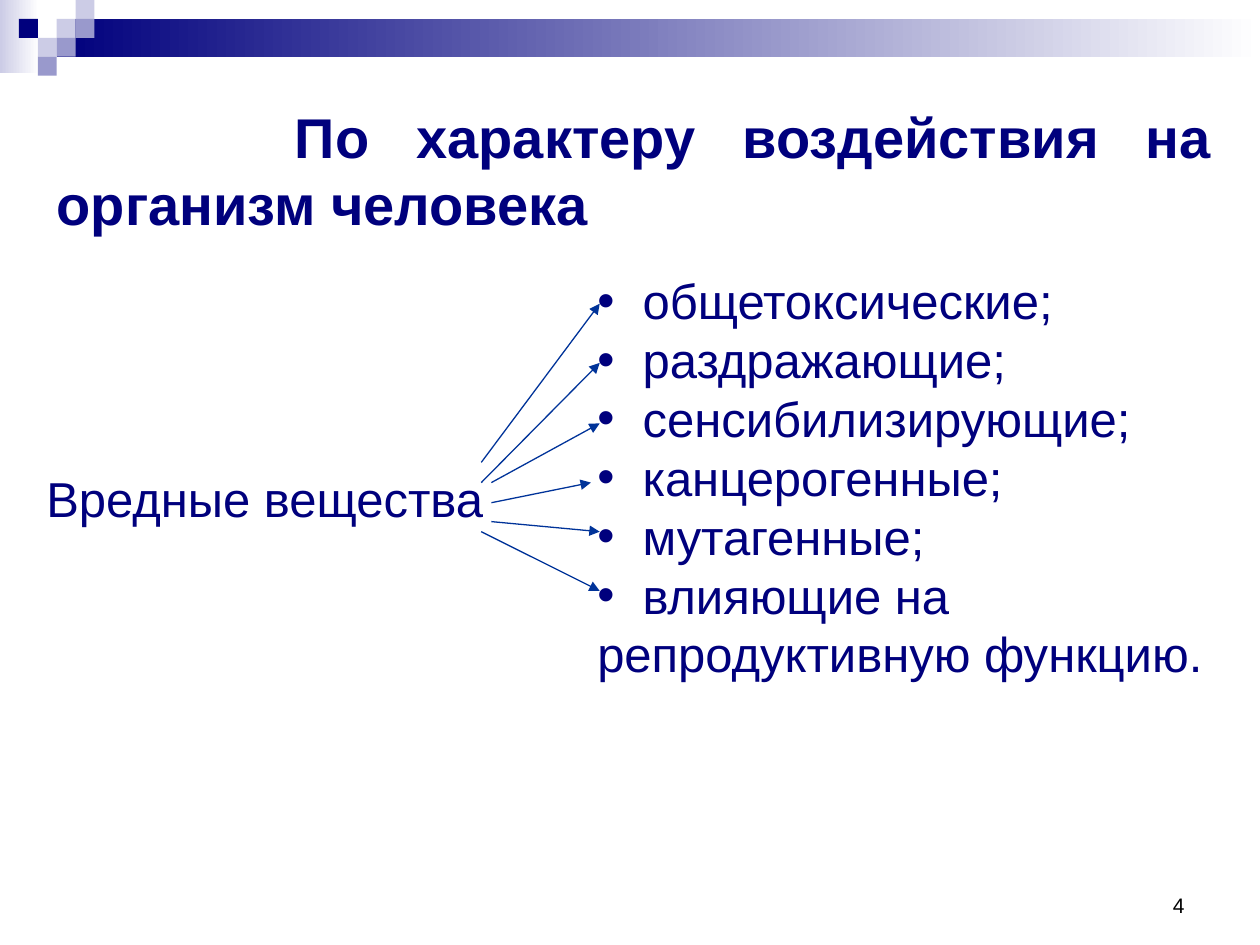
from dataclasses import dataclass

from lxml.etree import SubElement
from pptx import Presentation
from pptx.dml.color import RGBColor
from pptx.enum.shapes import MSO_CONNECTOR, MSO_SHAPE
from pptx.enum.text import MSO_ANCHOR, MSO_AUTO_SIZE, PP_ALIGN
from pptx.oxml.ns import qn
from pptx.util import Inches, Pt

TITLE = "По характеру воздействия на организм человека"
SOURCE = "Вредные вещества"
EFFECTS = [
    "общетоксические;",
    "раздражающие;",
    "сенсибилизирующие;",
    "канцерогенные;",
    "мутагенные;",
    "влияющие на",
]
LAST_EFFECT_ENDING = "репродуктивную функцию."
PAGE_NUMBER = "4"


@dataclass(frozen=True)
class Theme:
    font: str = "Arial"
    navy: str = "00007D"
    violet: str = "9999CC"
    pale: str = "CCCCE6"
    white: str = "FFFFFF"
    black: str = "000000"
    arrow: str = "003399"
    title_size: int = 32
    text_size: int = 28
    number_size: int = 12
    arrow_width: float = 0.75


THEME = Theme()

# left, top, width, height, start colour of the fade to white
BANDS = [(0, 0, 0.31, 0.58, THEME.pale), (0.45, 0.15, 9.55, 0.3, THEME.navy)]
TILE = 0.15
# column, row, colour on the grid of tiles
TILES = [
    (3, 1, THEME.pale),
    (4, 0, THEME.pale),
    (4, 1, THEME.violet),
    (2, 2, THEME.pale),
    (1, 1, THEME.navy),
    (3, 2, THEME.violet),
    (2, 3, THEME.violet),
]
# start and end of the arrow to each effect, from top to bottom
ARROWS = [
    ((3.82, 3.67), (4.76, 2.41)),
    ((3.82, 3.83), (4.76, 2.88)),
    ((3.9, 3.83), (4.76, 3.36)),
    ((3.9, 3.99), (4.69, 3.83)),
    ((3.9, 4.14), (4.76, 4.22)),
    ((3.82, 4.22), (4.76, 4.69)),
]
TITLE_INDENT = 1.89
BULLET_INDENT = 0.36


def colour(value):
    return RGBColor.from_string(value)


def add_block(page, left, top, width, height, start, end=None):
    """Add a borderless rectangle, fading from start to end if end is given."""
    block = page.shapes.add_shape(
        MSO_SHAPE.RECTANGLE, *map(Inches, (left, top, width, height)))
    block.shadow.inherit = False
    block.line.fill.background()
    if end is None:
        block.fill.solid()
        block.fill.fore_color.rgb = colour(start)
        return
    block.fill.gradient()
    block.fill.gradient_angle = 0
    for stop, value, position in zip(block.fill.gradient_stops, (start, end), (0, 1)):
        stop.color.rgb = colour(value)
        stop.position = position


def place(box, left, top, width, height):
    box.left, box.top, box.width, box.height = map(Inches, (left, top, width, height))


def write(box, lines, size, value=THEME.navy, bold=False,
          align=PP_ALIGN.LEFT, anchor=MSO_ANCHOR.TOP):
    frame = box.text_frame
    frame.text = "\n".join(lines)
    frame.word_wrap = True
    frame.auto_size = MSO_AUTO_SIZE.NONE
    frame.vertical_anchor = anchor
    for para in frame.paragraphs:
        para.alignment = align
        para.space_before = Pt(0)
        font = para.runs[0].font
        font.name, font.size, font.bold = THEME.font, Pt(size), bold
        font.color.rgb = colour(value)


def set_indent(para, margin, first_line, bullet=None):
    props = para._p.get_or_add_pPr()
    props.set("marL", str(Inches(margin)))
    props.set("indent", str(Inches(first_line)))
    if bullet:
        SubElement(props, qn("a:buFont"), typeface=THEME.font)
        SubElement(props, qn("a:buChar"), char=bullet)
    else:
        SubElement(props, qn("a:buNone"))


def add_text(page, area, *args, **options):
    box = page.shapes.add_textbox(*map(Inches, area))
    write(box, *args, **options)


def add_arrow(page, start, end):
    arrow = page.shapes.add_connector(
        MSO_CONNECTOR.STRAIGHT, *map(Inches, start + end))
    arrow.line.color.rgb = colour(THEME.arrow)
    arrow.line.width = Pt(THEME.arrow_width)
    SubElement(arrow.line._get_or_add_ln(), qn("a:tailEnd"), type="triangle")
    SubElement(arrow._element.spPr, qn("a:effectLst"))


def main():
    deck = Presentation()
    deck.slide_width, deck.slide_height = Inches(10), Inches(7.5)
    page = deck.slides.add_slide(deck.slide_layouts[1])

    for band in BANDS:
        add_block(page, *band, THEME.white)
    for column, row, value in TILES:
        add_block(page, column * TILE, row * TILE, TILE, TILE, value)

    title, effects = page.placeholders
    place(title, 0.35, 0.76, 9.37, 1.25)
    write(title, [TITLE], THEME.title_size, bold=True, align=PP_ALIGN.JUSTIFY)
    set_indent(title.text_frame.paragraphs[0], 0, TITLE_INDENT)

    place(effects, 4.64, 2.1, 5.08, 3.37)
    write(effects, EFFECTS + [LAST_EFFECT_ENDING], THEME.text_size)
    *items, ending = effects.text_frame.paragraphs
    for item in items:
        set_indent(item, BULLET_INDENT, -BULLET_INDENT, "•")
    set_indent(ending, 0, 0)

    add_text(page, (0.27, 3.67, 3.7, 0.57), [SOURCE], THEME.text_size)
    add_text(page, (7.17, 6.83, 2.33, 0.5), [PAGE_NUMBER], THEME.number_size,
             THEME.black, align=PP_ALIGN.RIGHT, anchor=MSO_ANCHOR.BOTTOM)
    for start, end in ARROWS:
        add_arrow(page, start, end)

    deck.save("out.pptx")


if __name__ == "__main__":
    main()
